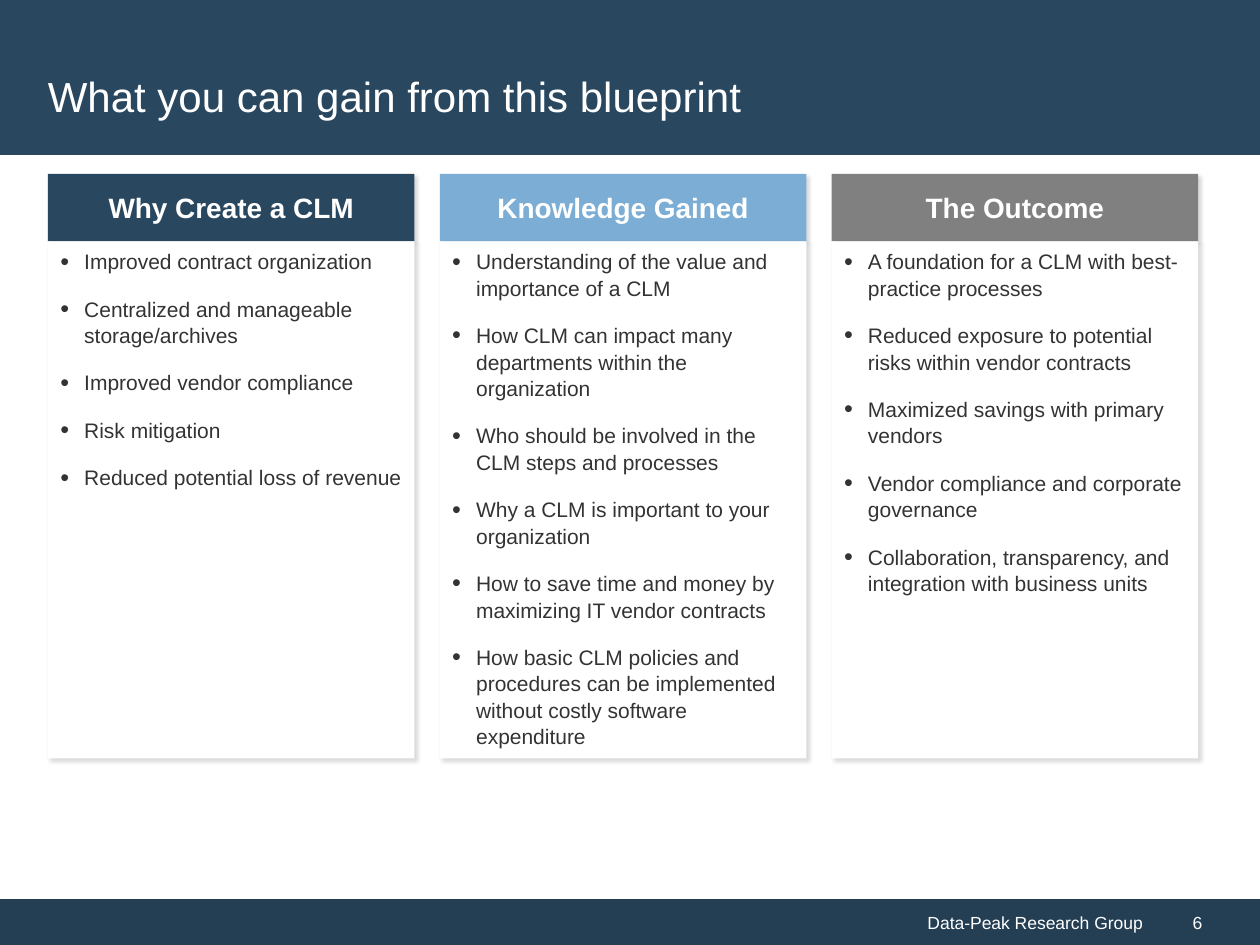
from collections import namedtuple

from lxml.etree import SubElement
from pptx import Presentation
from pptx.dml.color import RGBColor
from pptx.enum.shapes import MSO_SHAPE
from pptx.enum.text import MSO_ANCHOR as Anchor, PP_ALIGN as Align
from pptx.oxml.ns import qn
from pptx.util import Inches, Pt

Box = namedtuple("Box", "left top width height")

# The slide is a grid of 100 columns by 75 rows.
COLS, ROWS = 100, 75
WIDTH, HEIGHT = Inches(10), Inches(7.5)

FONT = "Arial"
WHITE, NAVY, DARK_NAVY = "FFFFFF", "29475F", "243F54"
SKY, GREY, CHARCOAL = "7CADD4", "808080", "333333"

TITLE = "What you can gain from this blueprint"
BENEFITS = [
    ("Why Create a CLM", NAVY, [
        "Improved contract organization",
        "Centralized and manageable storage/archives",
        "Improved vendor compliance",
        "Risk mitigation",
        "Reduced potential loss of revenue",
    ]),
    ("Knowledge Gained", SKY, [
        "Understanding of the value and importance of a CLM",
        "How CLM can impact many departments within the organization",
        "Who should be involved in the CLM steps and processes",
        "Why a CLM is important to your organization",
        "How to save time and money by maximizing IT vendor contracts",
        "How basic CLM policies and procedures can be implemented "
        "without costly software expenditure",
    ]),
    ("The Outcome", GREY, [
        "A foundation for a CLM with best-practice processes",
        "Reduced exposure to potential risks within vendor contracts",
        "Maximized savings with primary vendors",
        "Vendor compliance and corporate governance",
        "Collaboration, transparency, and integration with business units",
    ]),
]


def color(hex_code):
    return RGBColor.from_string(hex_code)


def place(shape, box):
    shape.left = int(WIDTH * box.left / COLS)
    shape.top = int(HEIGHT * box.top / ROWS)
    shape.width = int(WIDTH * box.width / COLS)
    shape.height = int(HEIGHT * box.height / ROWS)


def add_panel(slide, box, fill, anchor=Anchor.MIDDLE):
    panel = slide.shapes.add_shape(MSO_SHAPE.RECTANGLE, 0, 0, 0, 0)
    place(panel, box)
    panel.shadow.inherit = False
    panel.fill.solid()
    panel.fill.fore_color.rgb = color(fill)
    panel.line.fill.background()
    panel.text_frame.word_wrap = True
    panel.text_frame.vertical_anchor = anchor
    return panel


def add_soft_shadow(panel):
    effects = panel._element.spPr.find(qn("a:effectLst"))
    shadow = SubElement(effects, qn("a:outerShdw"), blurRad=str(Pt(2)),
                        dist=str(Pt(2)), dir=str(45 * 60000),
                        algn="tl", rotWithShape="0")
    black = SubElement(shadow, qn("a:srgbClr"), val="000000")
    SubElement(black, qn("a:alpha"), val="15000")


def add_run(paragraph, text, size, hex_code=WHITE, bold=False, align=Align.LEFT):
    paragraph.alignment = align
    run = paragraph.add_run()
    run.text = text
    run.font.name = FONT
    run.font.size = Pt(size)
    run.font.bold = bold
    run.font.color.rgb = color(hex_code)


def set_indent(paragraph, margin, first_line=0):
    properties = paragraph._p.get_or_add_pPr()
    properties.set("marL", str(Inches(margin)))
    properties.set("indent", str(Inches(first_line)))
    return properties


def set_bullet(paragraph):
    properties = set_indent(paragraph, 0.19, -0.19)
    bullet_color = SubElement(properties, qn("a:buClr"))
    SubElement(bullet_color, qn("a:srgbClr"), val=CHARCOAL)
    SubElement(properties, qn("a:buSzPct"), val="120000")
    SubElement(properties, qn("a:buFont"), typeface=FONT)
    SubElement(properties, qn("a:buChar"), char="•")


def add_title_band(slide, box):
    add_panel(slide, box, NAVY)
    title = slide.shapes.title
    title.element.getparent().append(title.element)  # in front of the band
    place(title, Box(box.left + 2.8, box.top + 2.8, 94.3, 9.6))
    title.text_frame.word_wrap = True
    title.text_frame.vertical_anchor = Anchor.MIDDLE
    add_run(title.text_frame.paragraphs[0], TITLE, 24)


def add_footer(slide, box):
    owner_width = box.width * 11 / 12
    owner = add_panel(slide, box._replace(width=owner_width), DARK_NAVY)
    line = owner.text_frame.paragraphs[0]
    add_run(line, "Data-Peak Research Group", 10, align=Align.RIGHT)
    set_indent(line, 0.29)

    number_box = box._replace(left=box.left + owner_width,
                              width=box.width - owner_width)
    number = add_panel(slide, number_box, DARK_NAVY).text_frame.paragraphs[0]
    add_run(number, "6", 10)
    set_indent(number, 0.2)


def add_benefit_column(slide, box, heading, accent, points):
    head_height = 5.35
    head = add_panel(slide, box._replace(height=head_height), accent)
    add_soft_shadow(head)
    add_run(head.text_frame.paragraphs[0], heading, 16, bold=True,
            align=Align.CENTER)

    body_box = box._replace(top=box.top + head_height,
                            height=box.height - head_height)
    body = add_panel(slide, body_box, WHITE, Anchor.TOP)
    add_soft_shadow(body)
    frame = body.text_frame
    for index, point in enumerate(points):
        line = frame.add_paragraph() if index else frame.paragraphs[0]
        line.space_before = Pt(12)
        line.line_spacing = 1.05
        add_run(line, point, 12, CHARCOAL)
        set_bullet(line)


def add_benefits(slide, box, gap):
    width = (box.width - gap * (len(BENEFITS) - 1)) / len(BENEFITS)
    for index, benefit in enumerate(BENEFITS):
        column = box._replace(left=box.left + index * (width + gap), width=width)
        add_benefit_column(slide, column, *benefit)


def main():
    deck = Presentation()
    deck.slide_width, deck.slide_height = WIDTH, HEIGHT
    slide = deck.slides.add_slide(deck.slide_layouts[5])
    add_footer(slide, Box(0, 71.35, COLS, 3.65))
    add_title_band(slide, Box(0, 0, COLS, 12.3))
    add_benefits(slide, Box(3.8, 13.8, 91.3, 46.4), gap=2)
    deck.save("out.pptx")


if __name__ == "__main__":
    main()
